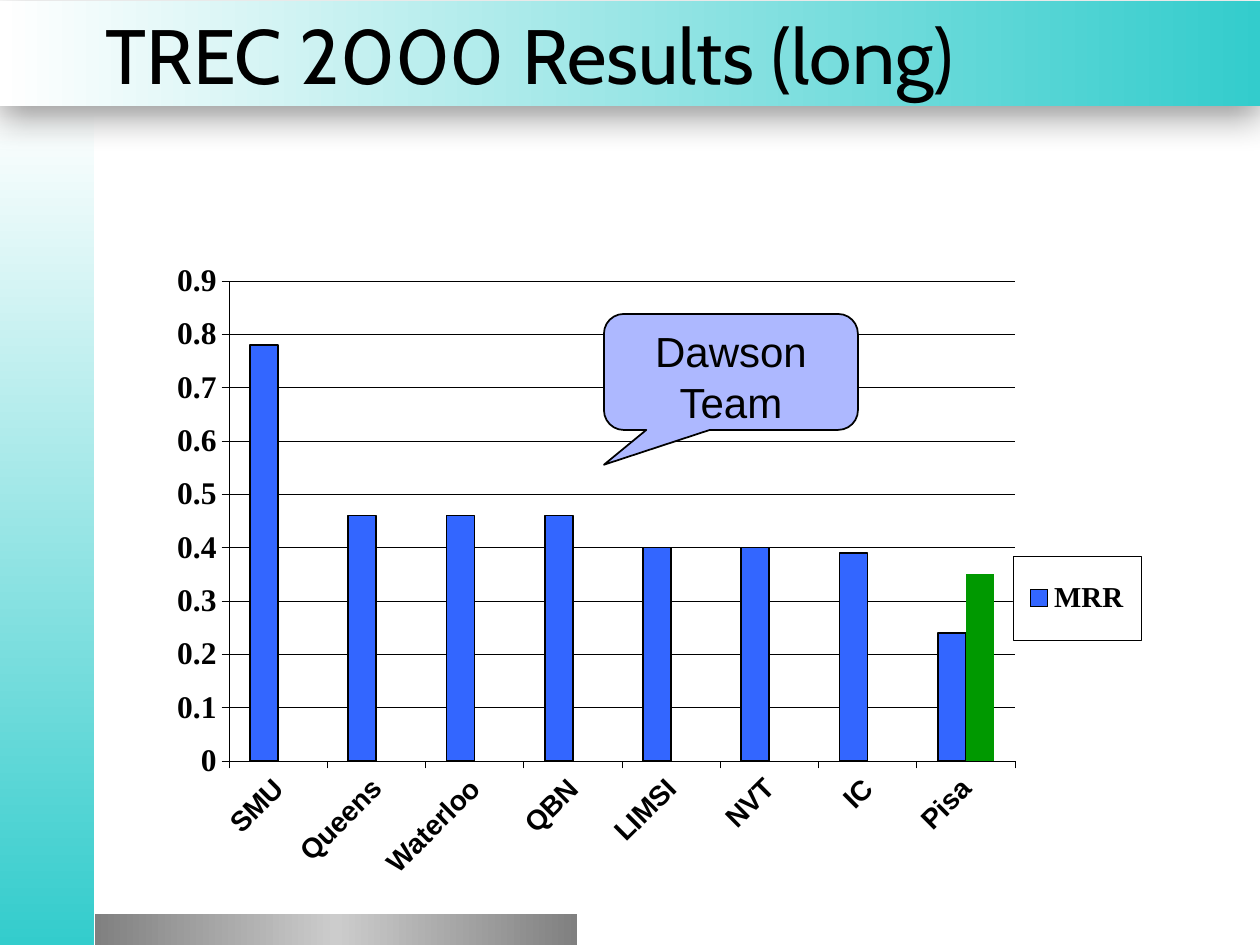
from dataclasses import dataclass

from lxml import etree
from pptx import Presentation
from pptx.chart.data import CategoryChartData
from pptx.dml.color import RGBColor
from pptx.enum import chart as ch, shapes, text
from pptx.oxml import parse_xml
from pptx.oxml.ns import nsdecls, qn
from pptx.util import Pt

PX = 914400 / 126  # EMU in one px


@dataclass(frozen=True)
class Theme:
    ink: str = "000000"
    white: str = "FFFFFF"
    teal: str = "33CCCC"
    grey: str = "808080"
    light: str = "CCCCCC"
    blue: str = "3366FF"
    green: str = "009900"
    lilac: str = "ADB8FF"
    head: str = "Cabin"
    sans: str = "Arial"
    serif: str = "Times New Roman"
    title: float = 44
    note: float = 24
    value: float = 18
    label: float = 16
    key: float = 16.5


T = Theme()


def px(*vals):
    return [round(v * PX) for v in vals]


def style(font, size, face, bold=False, color=T.ink):
    font.size, font.name, font.bold = Pt(size), face, bold
    font.color.rgb = RGBColor.from_string(color)


def stroke(line, width, color=T.ink):
    line.color.rgb = RGBColor.from_string(color)
    line.width = Pt(width)


def paint(fill, color):
    fill.solid()
    fill.fore_color.rgb = RGBColor.from_string(color)


def write(shape, words, size, face, align, anchor, **kind):
    frame = shape.text_frame
    frame.word_wrap = True
    frame.auto_size = text.MSO_AUTO_SIZE.NONE
    frame.vertical_anchor = anchor
    para = frame.paragraphs[0]
    para.alignment = align
    run = para.add_run()
    run.text = words
    style(run.font, size, face, **kind)


def band(slide, box, colors, angle=0):
    """Rectangle with evenly spaced gradient stops."""
    bar = slide.shapes.add_shape(shapes.MSO_SHAPE.RECTANGLE, *px(*box))
    bar.shadow.inherit = False
    bar.line.fill.background()
    bar.fill.gradient()
    bar.fill.gradient_angle = -angle % 360
    stops = bar.element.spPr.find(".//" + qn("a:gsLst"))
    for old in list(stops):
        stops.remove(old)
    for i, color in enumerate(colors):
        stop = etree.SubElement(stops, qn("a:gs"), pos=str(100000 * i // (len(colors) - 1)))
        etree.SubElement(stop, qn("a:srgbClr"), val=color)
    return bar


def shade(shape, blur, dist, alpha):
    effects = shape.element.spPr.find(qn("a:effectLst"))
    effects.append(parse_xml(
        f'<a:outerShdw {nsdecls("a")} blurRad="{Pt(blur)}" dist="{Pt(dist)}" dir="5400000" '
        f'algn="t" rotWithShape="0"><a:srgbClr val="{T.ink}">'
        f'<a:alpha val="{alpha * 1000}"/></a:srgbClr></a:outerShdw>'))


def layout(frame, box, inner=False):
    """Manual chart layout: a px box inside the chart frame, as shares of it."""
    wide, high = frame[2:]
    x, y, w, h = (v / full for v, full in zip(box, (wide, high) * 2))
    target = '<c:layoutTarget val="inner"/>' if inner else ""
    return parse_xml(
        f'<c:layout {nsdecls("c")}><c:manualLayout>{target}'
        '<c:xMode val="edge"/><c:yMode val="edge"/>'
        f'<c:x val="{x}"/><c:y val="{y}"/><c:w val="{w}"/><c:h val="{h}"/>'
        '</c:manualLayout></c:layout>')


def axes(chart):
    cat, val = chart.category_axis, chart.value_axis
    for axis in (cat, val):
        axis.major_tick_mark = ch.XL_TICK_MARK.OUTSIDE
        axis.minor_tick_mark = ch.XL_TICK_MARK.NONE
        stroke(axis.format.line, 0.25)
    style(cat.tick_labels.font, T.label, T.sans, bold=True)
    style(val.tick_labels.font, T.value, T.serif, bold=True)
    cat.tick_label_position = ch.XL_TICK_LABEL_POSITION.LOW
    turn = cat._element.find(qn("c:txPr")).find(qn("a:bodyPr"))
    turn.set("rot", "-2700000")
    turn.set("vert", "horz")
    val.minimum_scale, val.maximum_scale, val.major_unit = 0, 0.9, 0.1
    val.tick_labels.number_format = "General"
    val.tick_labels.number_format_is_linked = False
    val.has_major_gridlines = True
    stroke(val.major_gridlines.format.line, 0.25)


def legend(chart, frame, box):
    chart.has_legend = True
    key = chart.legend
    key.position = ch.XL_LEGEND_POSITION.RIGHT
    key.include_in_layout = False
    style(key.font, T.key, T.serif, bold=True)
    node = key._element
    # Only the first series is listed
    only = parse_xml(f'<c:legendEntry {nsdecls("c")}><c:idx val="1"/>'
                     '<c:delete val="1"/></c:legendEntry>')
    node.find(qn("c:legendPos")).addnext(only)
    for old in node.findall(qn("c:layout")):
        node.remove(old)
    only.addnext(layout(frame, box))
    node.find(qn("c:txPr")).addprevious(parse_xml(
        f'<c:spPr {nsdecls("c", "a")}><a:solidFill><a:srgbClr val="{T.white}"/></a:solidFill>'
        f'<a:ln w="{Pt(0.25)}"><a:solidFill><a:srgbClr val="{T.ink}"/></a:solidFill></a:ln></c:spPr>'))


def bars(slide, frame, cats, series):
    data = CategoryChartData()
    data.categories = cats
    for name, vals, _ in series:
        data.add_series(name, vals)
    chart = slide.shapes.add_chart(
        ch.XL_CHART_TYPE.COLUMN_CLUSTERED, *px(*frame), data).chart
    chart.has_title = False
    style(chart.font, T.value, T.serif, bold=True)
    plot = chart.plots[0]
    plot.gap_width, plot.overlap, plot.vary_by_categories = 150, 0, False
    for item, (_, _, color) in zip(plot.series, series):
        paint(item.format.fill, color)
        item.invert_if_negative = False
    stroke(plot.series[0].format.line, 1)
    area = chart._chartSpace.find(".//" + qn("c:plotArea"))
    for old in area.findall(qn("c:layout")):
        area.remove(old)
    area.insert(0, layout(frame, (128, 29, 786, 480), inner=True))
    axes(chart)
    legend(chart, frame, (912, 304, 128, 84))


def callout(slide, box, words):
    note = slide.shapes.add_shape(
        shapes.MSO_SHAPE.ROUNDED_RECTANGULAR_CALLOUT, *px(*box))
    note.shadow.inherit = False
    for i, value in enumerate((-0.5, 0.8, 0.17)):
        note.adjustments[i] = value
    paint(note.fill, T.lilac)
    stroke(note.line, 1)
    write(note, words, T.note, T.sans, text.PP_ALIGN.CENTER, text.MSO_ANCHOR.TOP)


def main():
    deck = Presentation()
    deck.slide_width, deck.slide_height = px(1260, 945)
    slide = deck.slides.add_slide(deck.slide_layouts[5])

    # Background bands
    band(slide, (0, 108, 94, 837), (T.white, T.teal), angle=90)
    top = band(slide, (0, 1, 1260, 105), (T.white, T.teal))
    shade(top, blur=20, dist=6, alpha=40)
    band(slide, (95, 914, 482, 31), (T.grey, T.light, T.grey))

    # Title, in front of the bands
    title = slide.shapes.title
    title.left, title.top, title.width, title.height = px(93, 0, 1071, 107)
    write(title, "TREC 2000 Results (long)", T.title, T.head,
          text.PP_ALIGN.LEFT, text.MSO_ANCHOR.MIDDLE)
    slide.shapes.element.append(title.element)

    # Scores by team; the green series has no name
    cats = ("SMU", "Queens", "Waterloo", "QBN", "LIMSI", "NVT", "IC", "Pisa")
    mrr = (0.78, 0.46, 0.46, 0.46, 0.4, 0.4, 0.39, 0.24)
    extra = (None,) * 7 + (0.35,)
    bars(slide, (101, 252, 1057, 653), cats,
         (("MRR", mrr, T.blue), ("", extra, T.green)))
    callout(slide, (604, 314, 254, 116), "Dawson Team")

    deck.save("out.pptx")


if __name__ == "__main__":
    main()
